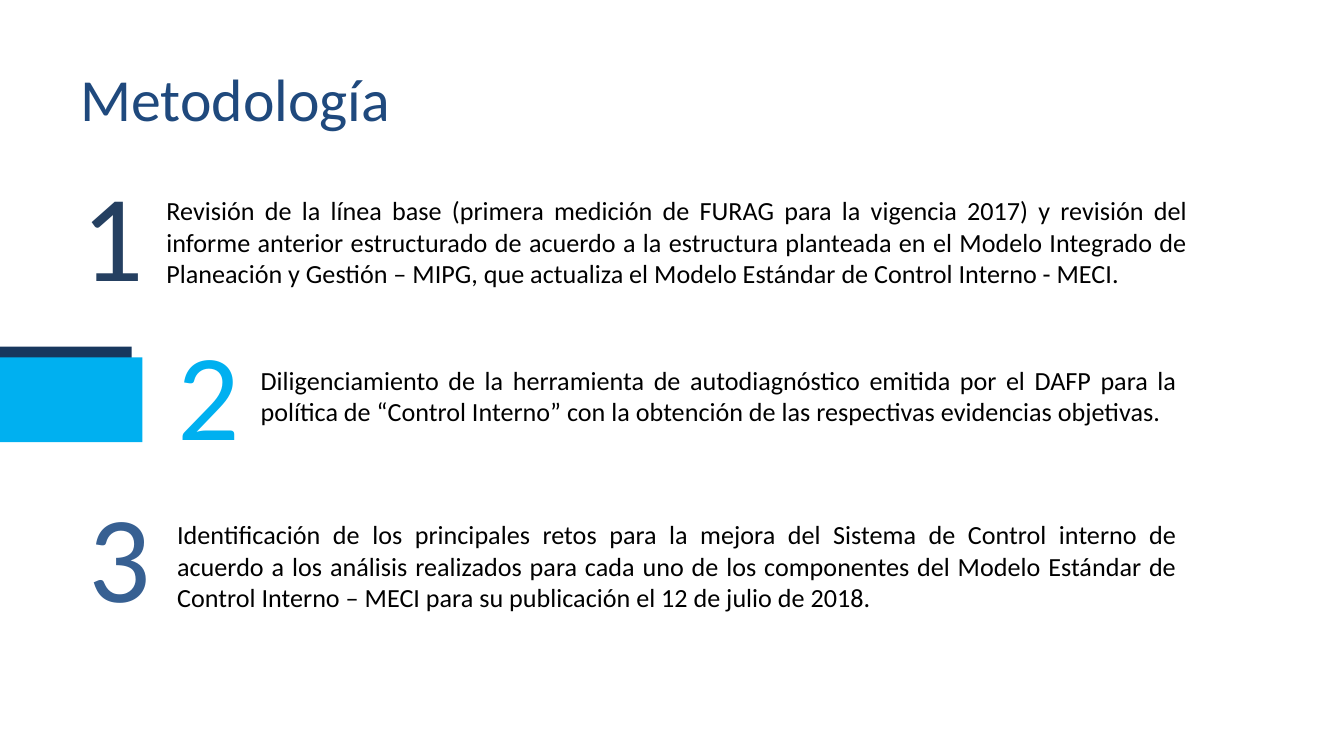
from pptx import Presentation
from pptx.dml.color import RGBColor
from pptx.enum.shapes import MSO_SHAPE
from pptx.enum.text import MSO_ANCHOR, PP_ALIGN
from pptx.util import Inches, Pt

RECTANGLE = MSO_SHAPE.RECTANGLE
TOP, MIDDLE = MSO_ANCHOR.TOP, MSO_ANCHOR.MIDDLE
LEFT, JUSTIFY = PP_ALIGN.LEFT, PP_ALIGN.JUSTIFY

FONT = "Calibri"
TITLE_BLUE = RGBColor(0x1F, 0x49, 0x7D)
DARK_BLUE = RGBColor(0x25, 0x40, 0x61)
NAVY = RGBColor(0x17, 0x37, 0x5E)
CYAN = RGBColor(0x00, 0xB0, 0xF0)
MID_BLUE = RGBColor(0x37, 0x60, 0x92)
BLACK = RGBColor(0x00, 0x00, 0x00)

# 16:9 slide
prs = Presentation()
prs.slide_width = Inches(10)
prs.slide_height = Inches(10 * 9 / 16)
s = prs.slides.add_slide(prs.slide_layouts[6])


def add_text(box, text, size, color, align=LEFT, anchor=TOP, wrap=True):
    sp = s.shapes.add_textbox(*[Inches(v) for v in box])
    tf = sp.text_frame
    tf.word_wrap = wrap
    tf.vertical_anchor = anchor
    p = tf.paragraphs[0]
    p.alignment = align
    r = p.add_run()
    r.text = text
    r.font.name = FONT
    r.font.size = Pt(size)
    r.font.color.rgb = color


# Title
add_text((0.5, 0.38, 9, 0.7), "Metodología", 32, TITLE_BLUE, anchor=MIDDLE)

# Numbered steps: number position, number colour, text box, text
steps = [
    ((0.51, 1.13), DARK_BLUE, (1.14, 1.4, 7.8, 0.81),
     "Revisión de la línea base (primera medición de FURAG para la vigencia "
     "2017) y revisión del informe anterior estructurado de acuerdo a la "
     "estructura planteada en el Modelo Integrado de Planeación y Gestión – "
     "MIPG, que actualiza el Modelo Estándar de Control Interno - MECI."),
    ((1.22, 2.31), CYAN, (1.84, 2.66, 7.02, 0.57),
     "Diligenciamiento de la herramienta de autodiagnóstico emitida por el "
     "DAFP para la política de “Control Interno” con la obtención de las "
     "respectivas evidencias objetivas."),
    ((0.56, 3.52), MID_BLUE, (1.22, 3.81, 7.64, 0.81),
     "Identificación de los principales retos para la mejora del Sistema de "
     "Control interno de acuerdo a los análisis realizados para cada uno de "
     "los componentes del Modelo Estándar de Control Interno – MECI para su "
     "publicación el 12 de julio de 2018."),
]
for number, (corner, color, box, text) in enumerate(steps, start=1):
    add_text((*corner, 0.67, 1.21), str(number), 66, color, wrap=False)
    add_text(box, text, 14, BLACK, align=JUSTIFY)

# Overlapping bars at the left edge
for top, width, color in [(2.58, 0.98, NAVY), (2.66, 1.06, CYAN)]:
    sp = s.shapes.add_shape(RECTANGLE, Inches(0), Inches(top),
                            Inches(width), Inches(0.63))
    sp.shadow.inherit = False
    sp.fill.solid()
    sp.fill.fore_color.rgb = color
    sp.line.fill.background()

prs.save("out.pptx")
